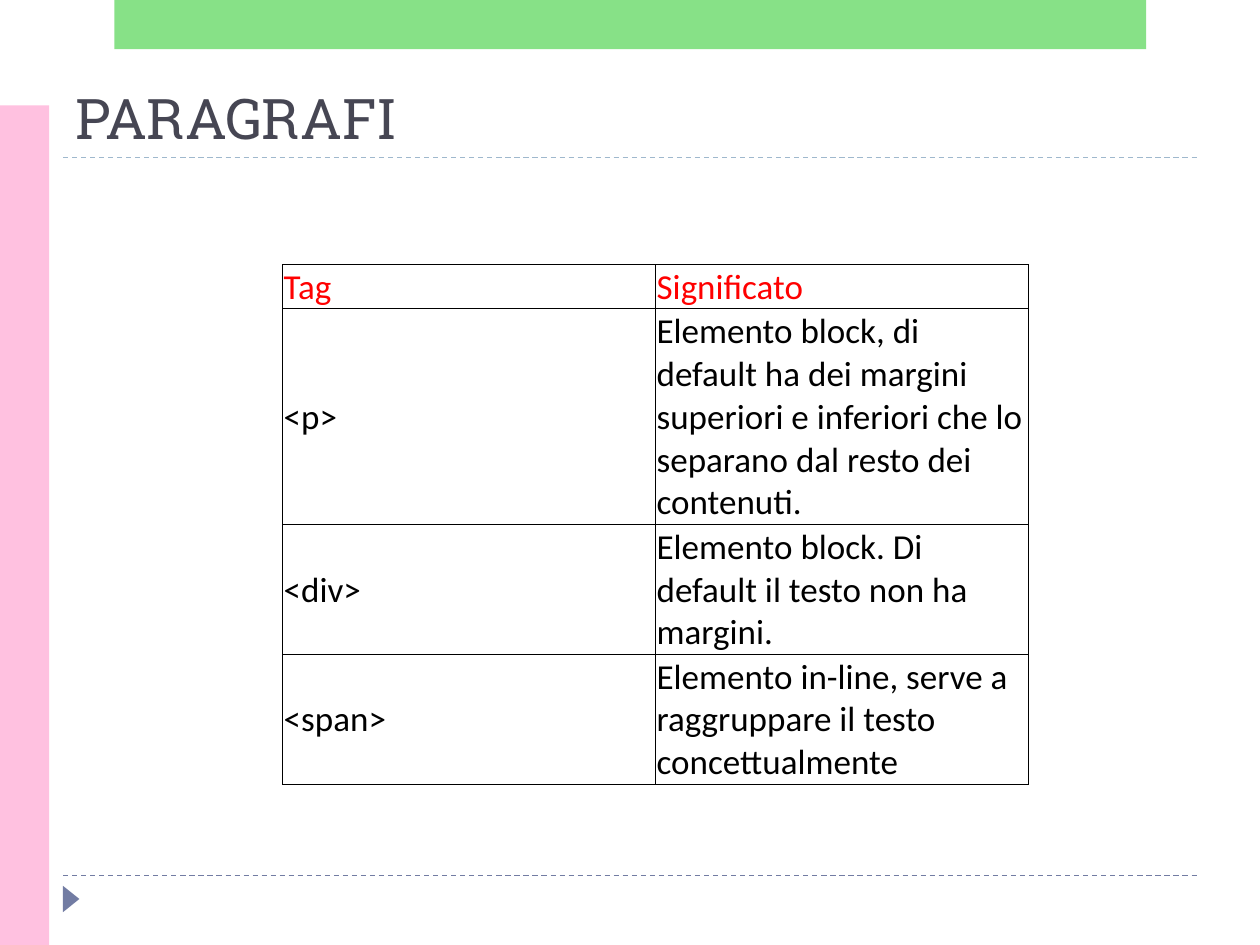
from lxml import etree
from pptx import Presentation
from pptx.dml.color import RGBColor
from pptx.enum import dml, shapes, text
from pptx.oxml import ns
from pptx.util import Pt

# Content
TITLE = "PARAGRAFI"
TAGS = [
    ("Tag", "Significato"),
    ("<p>", "Elemento block, di default ha dei margini superiori e inferiori "
            "che lo separano dal resto dei contenuti."),
    ("<div>", "Elemento block. Di default il testo non ha margini."),
    ("<span>", "Elemento in-line, serve a raggruppare il testo concettualmente"),
]

# Layout, in points
LEFT, RIGHT = 36, 684
RULES = [(500.4, "727CA3"), (90, "9FB8CD")]
TABLE = (161.4, 151.2, 426.2, 265.7)
HEADER_HEIGHT, ROW_HEIGHT = 18.7, 55.4


def rgb(value):
    return RGBColor.from_string(value)


def add_block(kind, box, color):
    block = slide.shapes.add_shape(kind, *map(Pt, box))
    block.shadow.inherit = False
    block.fill.solid()
    block.fill.fore_color.rgb = rgb(color)
    block.line.fill.background()
    return block


def add_run(paragraph, words, font, size, color):
    run = paragraph.add_run()
    run.text = words
    run.font.name, run.font.size = font, Pt(size)
    run.font.color.rgb = rgb(color)


def add_borders(cell):
    properties = cell._tc.get_or_add_tcPr()
    for side in ("lnL", "lnR", "lnT", "lnB"):
        border = etree.SubElement(properties, ns.qn("a:" + side), w=str(Pt(0.5)))
        fill = etree.SubElement(border, ns.qn("a:solidFill"))
        etree.SubElement(fill, ns.qn("a:srgbClr"), val="000000")


prs = Presentation()
prs.slide_width, prs.slide_height = Pt(720), Pt(540)
slide = prs.slides.add_slide(prs.slide_layouts[5])
slide.background.fill.solid()
slide.background.fill.fore_color.rgb = rgb("FFFFFF")

# Dashed rules
for y, color in RULES:
    rule = slide.shapes.add_connector(
        shapes.MSO_CONNECTOR.STRAIGHT, Pt(LEFT), Pt(y), Pt(RIGHT), Pt(y))
    rule.line.color.rgb = rgb(color)
    rule.line.width = Pt(0.75)
    rule.line.dash_style = dml.MSO_LINE.DASH
    etree.SubElement(rule._element.spPr, ns.qn("a:effectLst"))

# Corner marker and edge bands
marker = add_block(shapes.MSO_SHAPE.ISOSCELES_TRIANGLE, (33.1, 509, 15.1, 9.4), "727CA3")
marker.rotation = 90
add_block(shapes.MSO_SHAPE.RECTANGLE, (0, 60.2, 28.1, 479.8), "FFC1E0")
top_band = add_block(shapes.MSO_SHAPE.RECTANGLE, (65.3, 0, 589.7, 28.1), "62D862")
band_color = top_band._element.spPr.find(".//" + ns.qn("a:srgbClr"))
etree.SubElement(band_color, ns.qn("a:alpha"), val="76000")

# Title
title = slide.shapes.title
title.left, title.top, title.width, title.height = map(Pt, (LEFT, 39.6, RIGHT - LEFT, 50.4))
title.text_frame.auto_size = text.MSO_AUTO_SIZE.NONE
title.text_frame.vertical_anchor = text.MSO_ANCHOR.BOTTOM
heading = title.text_frame.paragraphs[0]
heading.alignment = text.PP_ALIGN.LEFT
add_run(heading, TITLE, "Roboto Slab", 32, "464653")

# Tag table
frame = slide.shapes.add_table(len(TAGS), len(TAGS[0]), *map(Pt, TABLE))
table = frame.table
table.first_row = table.horz_banding = False
for r, entries in enumerate(TAGS):
    table.rows[r].height = Pt(ROW_HEIGHT if r else HEADER_HEIGHT)
    for c, words in enumerate(entries):
        cell = table.cell(r, c)
        add_borders(cell)
        cell.fill.background()
        cell.vertical_anchor = text.MSO_ANCHOR.MIDDLE
        cell.margin_left = cell.margin_right = cell.margin_top = Pt(0.75)
        cell.margin_bottom = 0
        add_run(cell.text_frame.paragraphs[0], words, "Calibri", 20,
                "000000" if r else "FF0000")
frame.height = Pt(TABLE[3])  # row heights reset the frame

prs.save("out.pptx")
